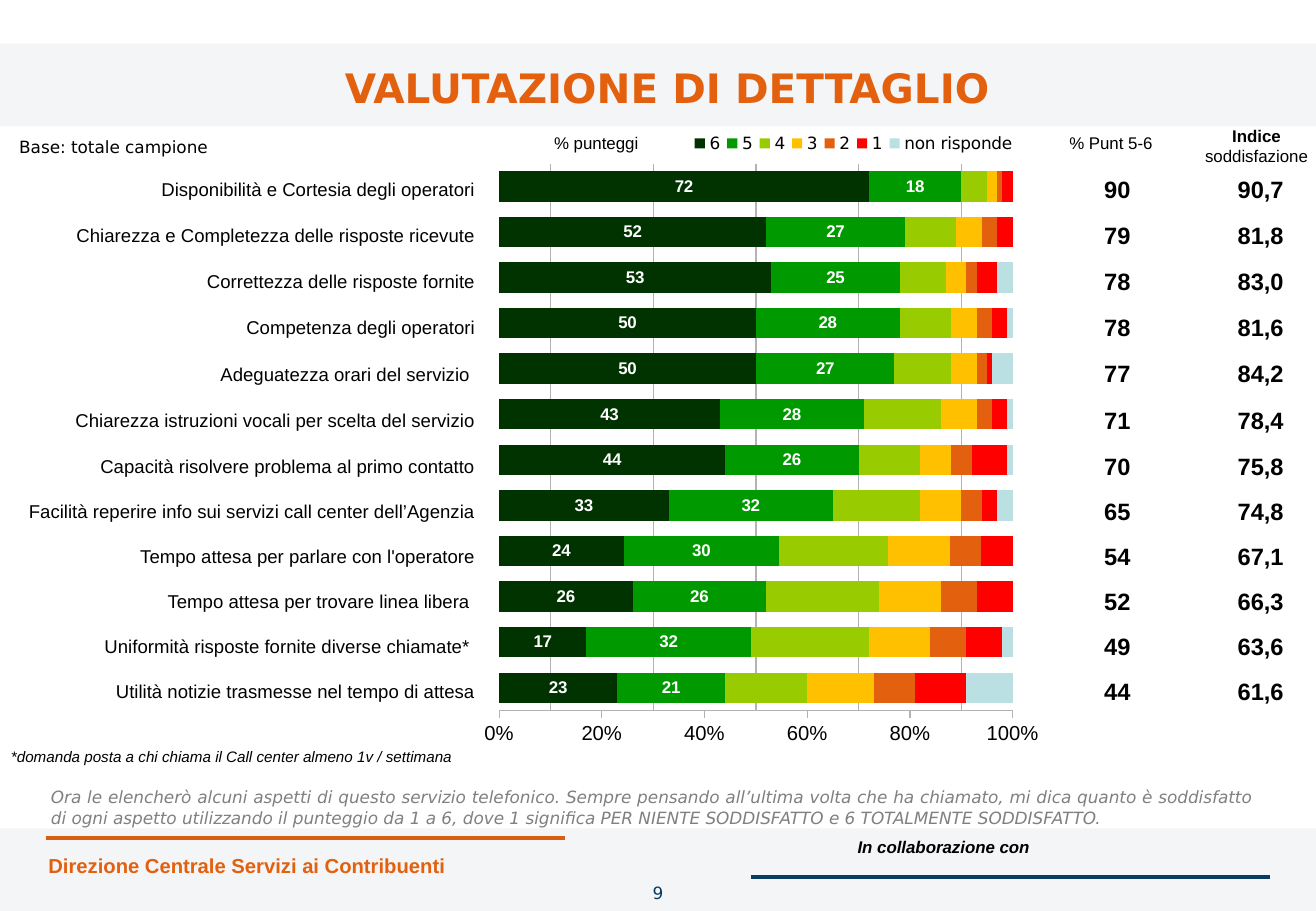
from copy import deepcopy

from lxml import etree
from pptx import Presentation
from pptx.chart.data import CategoryChartData
from pptx.dml.color import RGBColor
from pptx.enum.chart import XL_CHART_TYPE as ChartType, XL_LEGEND_POSITION as LegendPos
from pptx.enum.chart import XL_TICK_MARK as Tick
from pptx.enum.shapes import MSO_CONNECTOR as Connector, MSO_SHAPE as Shape
from pptx.enum.text import MSO_ANCHOR as Anchor, MSO_AUTO_SIZE as AutoSize, PP_ALIGN as Align
from pptx.oxml.ns import qn
from pptx.util import Inches, Pt

ORANGE, NAVY, BLACK, GRAY, WHITE = "E3600F", "073C62", "000000", "808080", "FFFFFF"
SANS, ARIAL = "DejaVu Sans", "Arial"

# Item, scores (6, 5, 4, 3, 2, 1, no answer), % of 5-6, index
RATINGS = [
    ("Disponibilità e Cortesia degli operatori", (72, 18, 5, 2, 1, 2, 0), "90", "90,7"),
    ("Chiarezza e Completezza delle risposte ricevute", (52, 27, 10, 5, 3, 3, 0), "79", "81,8"),
    ("Correttezza delle risposte fornite", (53, 25, 9, 4, 2, 4, 3), "78", "83,0"),
    ("Competenza degli operatori", (50, 28, 10, 5, 3, 3, 1), "78", "81,6"),
    ("Adeguatezza orari del servizio ", (50, 27, 11, 5, 2, 1, 4), "77", "84,2"),
    ("Chiarezza istruzioni vocali per scelta del servizio", (43, 28, 15, 7, 3, 3, 1), "71", "78,4"),
    ("Capacità risolvere problema al primo contatto", (44, 26, 12, 6, 4, 7, 1), "70", "75,8"),
    ("Facilità reperire info sui servizi call center dell’Agenzia", (33, 32, 17, 8, 4, 3, 3), "65", "74,8"),
    ("Tempo attesa per parlare con l'operatore", (24, 30, 21, 12, 6, 6, 0), "54", "67,1"),
    ("Tempo attesa per trovare linea libera ", (26, 26, 22, 12, 7, 7, 0), "52", "66,3"),
    ("Uniformità risposte fornite diverse chiamate* ", (17, 32, 23, 12, 7, 7, 2), "49", "63,6"),
    ("Utilità notizie trasmesse nel tempo di attesa", (23, 21, 16, 13, 8, 10, 9), "44", "61,6"),
]
SCORES = [("6", "003300"), ("5", "009900"), ("4", "99CC00"), ("3", "FFC000"),
          ("2", ORANGE), ("1", "FF0000"), ("non risponde", "BBE0E3")]
QUESTION = ("Ora le elencherò alcuni aspetti di questo servizio telefonico. Sempre pensando "
            "all’ultima volta che ha chiamato, mi dica quanto è soddisfatto di ogni aspetto "
            "utilizzando il punteggio da 1 a 6, dove 1 significa PER NIENTE SODDISFATTO e "
            "6 TOTALMENTE SODDISFATTO.")


def rgb(code):
    return RGBColor.from_string(code)


def set_font(font, size, name=ARIAL, color=BLACK, bold=False, italic=False):
    font.size, font.name, font.bold, font.italic = Pt(size), name, bold, italic
    font.color.rgb = rgb(color)


def add_text(slide, box, text, size, align=Align.LEFT, inset=(0.09, 0.04), **style):
    frame = slide.shapes.add_textbox(*map(Inches, box)).text_frame
    frame.word_wrap = True
    frame.margin_left = frame.margin_right = Inches(inset[0])
    frame.margin_top = frame.margin_bottom = Inches(inset[1])
    frame.text = text
    for paragraph in frame.paragraphs:
        paragraph.alignment = align
        set_font(paragraph.font, size, **style)
    return frame


def add_band(slide, box):
    band = slide.shapes.add_shape(Shape.RECTANGLE, *map(Inches, box))
    band.shadow.inherit = False
    band.line.fill.background()
    band.fill.solid()
    band.fill.fore_color.rgb = rgb("1E3D5C")
    tint = band._element.spPr.find(".//" + qn("a:srgbClr"))
    etree.SubElement(tint, qn("a:alpha")).set("val", "5000")


def add_rule(slide, x, y, width, color):
    rule = slide.shapes.add_connector(
        Connector.STRAIGHT, Inches(x), Inches(y), Inches(x + width), Inches(y))
    rule.line.color.rgb = rgb(color)
    rule.line.width = Pt(2)
    etree.SubElement(rule._element.spPr, qn("a:effectLst"))


def add_header(slide, box):
    x, y, width, height = box
    add_band(slide, box)
    title = slide.shapes.title
    slide.shapes._spTree.append(title._element)  # in front of the band
    title.left, title.top = Inches(x + 0.38), Inches(y)
    title.width, title.height = Inches(width - 0.61), Inches(height + 0.03)
    frame = title.text_frame
    frame.text = "VALUTAZIONE DI DETTAGLIO"
    frame.auto_size = AutoSize.NONE
    frame.vertical_anchor = Anchor.MIDDLE
    frame.paragraphs[0].alignment = Align.CENTER
    set_font(frame.paragraphs[0].font, 24, SANS, ORANGE, bold=True)


def add_footer(slide, box):
    x, y, width, height = box
    add_rule(slide, x + 0.38, y + 0.08, 4.27, ORANGE)
    add_rule(slide, x + 6.18, y + 0.4, 4.27, NAVY)
    add_band(slide, box)
    add_text(slide, (x + 6.55, y + 0.03, 2.05, 0.26), "In collaborazione con ", 10,
             Align.RIGHT, bold=True, italic=True)
    add_text(slide, (x + 0.3, y + 0.16, 4.09, 0.3), "Direzione Centrale Servizi ai Contribuenti",
             12, inset=(0.1, 0.05), color=ORANGE, bold=True)
    add_text(slide, (x + 4.94, y + 0.4, 0.95, 0.39), "9", 10, Align.CENTER,
             inset=(0.1, 0.05), name=SANS, color=NAVY)


def add_column(slide, x, y, width, values, align, size, bold=False):
    heights = [0.38 if row < 7 else 0.37 for row in range(len(values))]
    frame = slide.shapes.add_table(len(values), 1, Inches(x), Inches(y),
                                   Inches(width), Inches(sum(heights)))
    table = frame.table
    table.first_row = table.horz_banding = False
    for row, height, value in zip(table.rows, heights, values):
        row.height = Inches(height)
        cell = row.cells[0]
        cell.fill.background()
        cell.vertical_anchor = Anchor.MIDDLE
        cell.margin_left = cell.margin_right = cell.margin_top = Inches(0.01)
        cell.margin_bottom = 0
        cell.text = value
        paragraph = cell.text_frame.paragraphs[0]
        paragraph.alignment = align
        set_font(paragraph.font, size, bold=bold)
        # Drop the style's cell borders
        for position, side in enumerate(("lnL", "lnR", "lnT", "lnB")):
            border = etree.Element(qn("a:" + side), w="0")
            etree.SubElement(border, qn("a:noFill"))
            cell._tc.get_or_add_tcPr().insert(position, border)


def set_layout(parent, position, x, y, width, height, inner=False):
    for old in parent.findall(qn("c:layout")):
        parent.remove(old)
    layout = etree.Element(qn("c:layout"))
    manual = etree.SubElement(layout, qn("c:manualLayout"))
    parts = [("layoutTarget", "inner")] if inner else []
    parts += [("xMode", "edge"), ("yMode", "edge"), ("x", x), ("y", y), ("w", width), ("h", height)]
    for tag, value in parts:
        etree.SubElement(manual, qn("c:" + tag)).set("val", str(value))
    parent.insert(position, layout)


def add_scores_chart(slide, box):
    data = CategoryChartData(number_format="#,##0")
    rows = RATINGS[::-1]
    data.categories = [str(number) for number in range(1, len(rows) + 1)]
    for index, (score, _) in enumerate(SCORES):
        data.add_series(score, [row[1][index] for row in rows])
    chart = slide.shapes.add_chart(ChartType.BAR_STACKED_100, *map(Inches, box), data).chart
    chart.has_title = False
    set_font(chart.font, 18, SANS)

    # Bars
    plot = chart.plots[0]
    plot.gap_width, plot.overlap, plot.vary_by_categories = 50, 100, False
    for series, (score, color) in zip(plot.series, SCORES):
        series.format.fill.solid()
        series.format.fill.fore_color.rgb = rgb(color)
        if score in ("6", "5"):
            labels = series.data_labels
            labels.show_value = True
            labels.number_format, labels.number_format_is_linked = "#,##0", False
            set_font(labels.font, 10, color=WHITE, bold=True)

    # Axes
    chart.category_axis.visible = False
    axis = chart.value_axis
    axis.major_unit, axis.minor_unit = 0.2, 0.1
    axis.has_major_gridlines, axis.has_minor_gridlines = False, True
    axis.major_tick_mark, axis.minor_tick_mark = Tick.OUTSIDE, Tick.NONE
    axis.format.line.color.rgb = rgb("B3B3B3")
    axis.format.line.width = Pt(0.75)
    gridlines = axis._element.find(qn("c:minorGridlines"))
    gridlines.append(deepcopy(axis._element.find(qn("c:spPr"))))
    axis.tick_labels.number_format, axis.tick_labels.number_format_is_linked = "0%", False
    set_font(axis.tick_labels.font, 12)

    # Legend and plot position
    chart.has_legend = True
    chart.legend.position = LegendPos.TOP
    chart.legend.include_in_layout = False
    set_font(chart.legend.font, 10, SANS)
    set_layout(chart.legend._element, 1, 0.34, 0.07, 0.51, 0.04)
    set_layout(chart._chartSpace.chart.plotArea, 0, 0.05, 0.12, 0.79, 0.81, inner=True)


def add_ratings(slide, box):
    x, y, width, height = box
    add_scores_chart(slide, (x + 3.84, y - 0.31, 5.35, 5.56))

    # Columns beside the bars
    items, _, top_scores, indexes = zip(*RATINGS)
    top = y + 0.38
    add_column(slide, x - 0.41, top, 4.33, items, Align.RIGHT, 11)
    add_column(slide, x + 8.8, top, 0.79, top_scores, Align.CENTER, 14, bold=True)
    add_column(slide, x + 9.98, top, 0.79, indexes, Align.CENTER, 14, bold=True)

    # Headings and notes
    base = add_text(slide, (x + 0.06, y, 3.23, 0.27), "Base: totale campione", 10,
                    Align.JUSTIFY, inset=(0.1, 0.05), name=SANS)
    base.paragraphs[0].line_spacing = 1.5
    for left, heading in ((4.47, "% punteggi"), (8.71, "% Punt 5-6")):
        add_text(slide, (x + left, y + 0.06, 1.18, 0.26), heading, 10)
    index = add_text(slide, (x + 9.75, y, 1.18, 0.42), "Indice\nsoddisfazione", 10, Align.CENTER)
    index.paragraphs[0].font.bold = True
    add_text(slide, (x, y + 5.12, 4.16, 0.24),
             "*domanda posta a chi chiama il Call center almeno 1v / settimana", 9, italic=True)
    add_text(slide, (x + 0.32, y + height - 0.39, width - 0.75, 0.35), QUESTION, 10,
             Align.JUSTIFY, inset=(0.1, 0.05), name=SANS, color=GRAY, italic=True)


prs = Presentation()
prs.slide_width, prs.slide_height = Inches(10.83), Inches(7.5)
page = prs.slides.add_slide(prs.slide_layouts[5])
add_footer(page, (0, 6.82, 10.83, 0.68))
add_header(page, (0, 0.36, 10.83, 0.68))
add_ratings(page, (0, 0.99, 10.83, 5.83))
prs.save("out.pptx")
